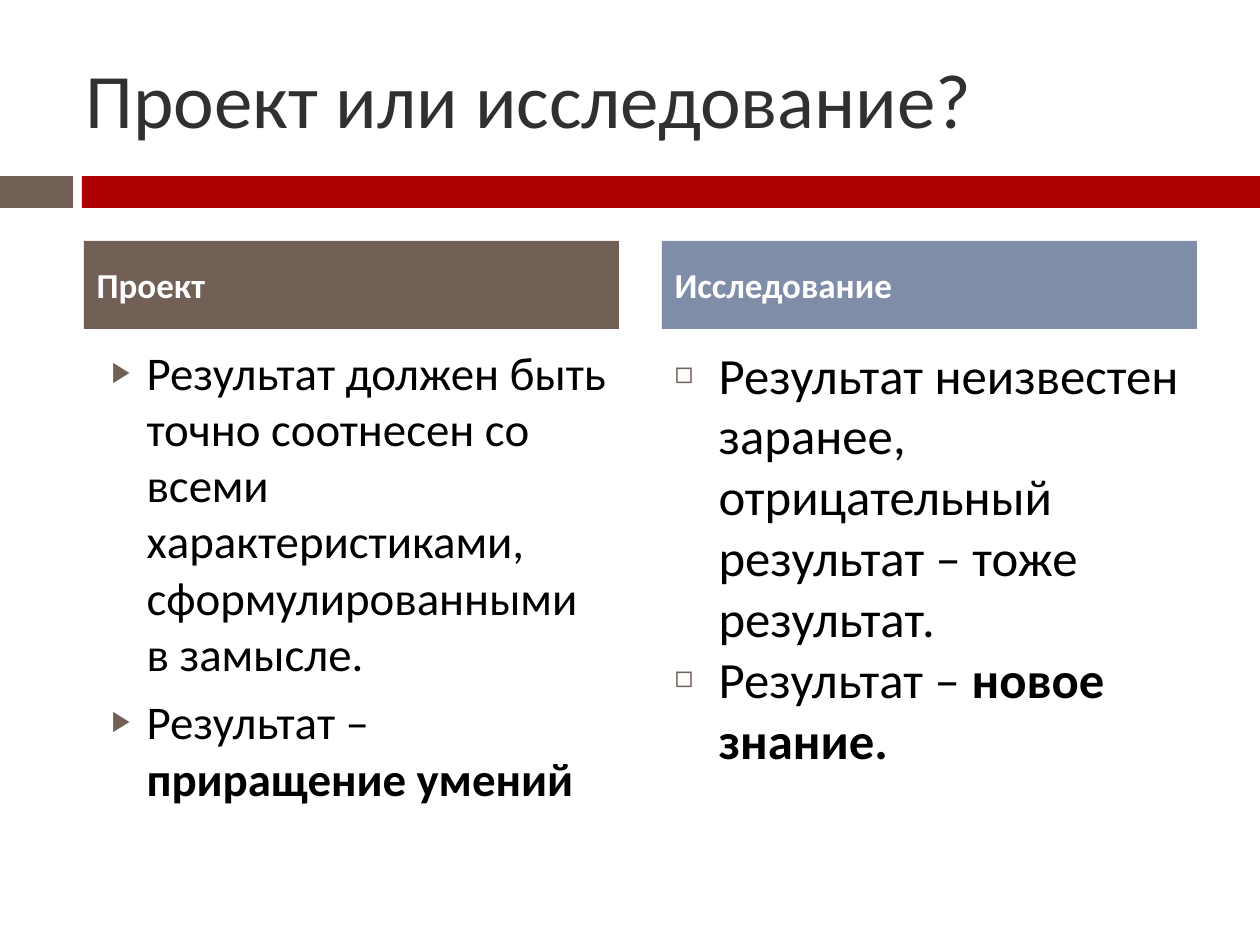
"""Build a slide that compares a project with a research study."""
from dataclasses import dataclass

from lxml.etree import SubElement
from pptx import Presentation
from pptx.dml.color import RGBColor
from pptx.enum.shapes import MSO_SHAPE
from pptx.enum.text import MSO_ANCHOR, MSO_AUTO_SIZE, PP_ALIGN
from pptx.oxml.ns import qn
from pptx.util import Emu, Pt

SCALE = 914400 / 126
FONT = "Calibri"
BROWN, RED, BLUE = "726056", "AD0101", "808DA9"
WHITE, BLACK, GREY = "FFFFFF", "000000", "303030"


@dataclass
class Box:
    left: int
    top: int
    width: int
    height: int


@dataclass
class Item:
    text: str
    strong: str = ""


@dataclass
class Column:
    left: int
    fill: str
    head: str
    items: list[Item]
    size: float
    mark: str
    margin: int
    hang: int
    before: int


COLUMNS = [
    Column(84, BROWN, "Проект", [
        Item("Результат должен быть точно соотнесен со всеми "
             "характеристиками, сформулированными в замысле."),
        Item("Результат – ", "приращение умений"),
    ], 26.8, "▶", 50, 35, 7),
    Column(662, BLUE, "Исследование", [
        Item("Результат неизвестен заранее, отрицательный результат – "
             "тоже результат."),
        Item("Результат – ", "новое знание."),
    ], 29, "◻", 44, 44, 0),
]


def px(count: int) -> Emu:
    """Turn pixels into EMU."""
    return Emu(round(count * SCALE))


def rgb(code: str) -> RGBColor:
    """Turn a hex string into a colour."""
    return RGBColor.from_string(code)


def place(shape, box: Box) -> None:
    """Move and size a shape."""
    shape.left, shape.top = px(box.left), px(box.top)
    shape.width, shape.height = px(box.width), px(box.height)


def paint(shape, code: str) -> None:
    """Give a shape a plain fill."""
    shape.fill.solid()
    shape.fill.fore_color.rgb = rgb(code)


def style(para, size: float, code: str, before: int = 0,
          bold: bool | None = None) -> None:
    """Set the font and spacing of a paragraph."""
    para.alignment = PP_ALIGN.LEFT
    para.space_before = Pt(before)
    font = para.font
    font.name, font.size, font.bold = FONT, Pt(size), bold
    font.color.rgb = rgb(code)


def bullet(para, col: Column) -> None:
    """Add a hanging bullet to a paragraph."""
    props = para._p.get_or_add_pPr()
    props.set("marL", str(px(col.margin)))
    props.set("indent", str(-px(col.hang)))
    tint = SubElement(props, qn("a:buClr"))
    SubElement(tint, qn("a:srgbClr"), val=BROWN)
    SubElement(props, qn("a:buSzPct"), val="60000")
    SubElement(props, qn("a:buFont"), typeface=FONT)
    SubElement(props, qn("a:buChar"), char=col.mark)


def label(shape, box: Box, text: str, size: float, code: str,
          before: int = 0, bold: bool | None = None) -> None:
    """Fill a placeholder with one centred line of text."""
    place(shape, box)
    frame = shape.text_frame
    frame.text = text
    frame.auto_size = MSO_AUTO_SIZE.NONE
    frame.vertical_anchor = MSO_ANCHOR.MIDDLE
    style(frame.paragraphs[0], size, code, before, bold)


def bar(slide, box: Box, code: str) -> None:
    """Draw a plain band."""
    shape = slide.shapes.add_shape(MSO_SHAPE.RECTANGLE, 0, 0, 0, 0)
    place(shape, box)
    paint(shape, code)
    shape.line.fill.background()
    shape.shadow.inherit = False


def column(head, body, col: Column) -> None:
    """Fill the heading and list of one column."""
    label(head, Box(col.left, 241, 535, 88), col.head, 20, WHITE, 7, True)
    paint(head, col.fill)
    place(body, Box(col.left, 337, 535, 494))
    frame = body.text_frame
    frame.auto_size = MSO_AUTO_SIZE.NONE
    for pos, item in enumerate(col.items):
        para = frame.add_paragraph() if pos else frame.paragraphs[0]
        bullet(para, col)
        style(para, col.size, BLACK, col.before)
        para.add_run().text = item.text
        if item.strong:
            run = para.add_run()
            run.text = item.strong
            run.font.bold = True


def main() -> None:
    """Build and save the slide."""
    deck = Presentation()
    deck.slide_width, deck.slide_height = px(1260), px(945)
    slide = deck.slides.add_slide(deck.slide_layouts[4])
    bar(slide, Box(0, 176, 73, 32), BROWN)
    bar(slide, Box(82, 176, 1178, 32), RED)
    title, *parts = slide.placeholders
    label(title, Box(73, 38, 1124, 120), "Проект или исследование?", 44, GREY)
    for head, body, col in zip(parts[::2], parts[1::2], COLUMNS):
        column(head, body, col)
    deck.save("out.pptx")


if __name__ == "__main__":
    main()
